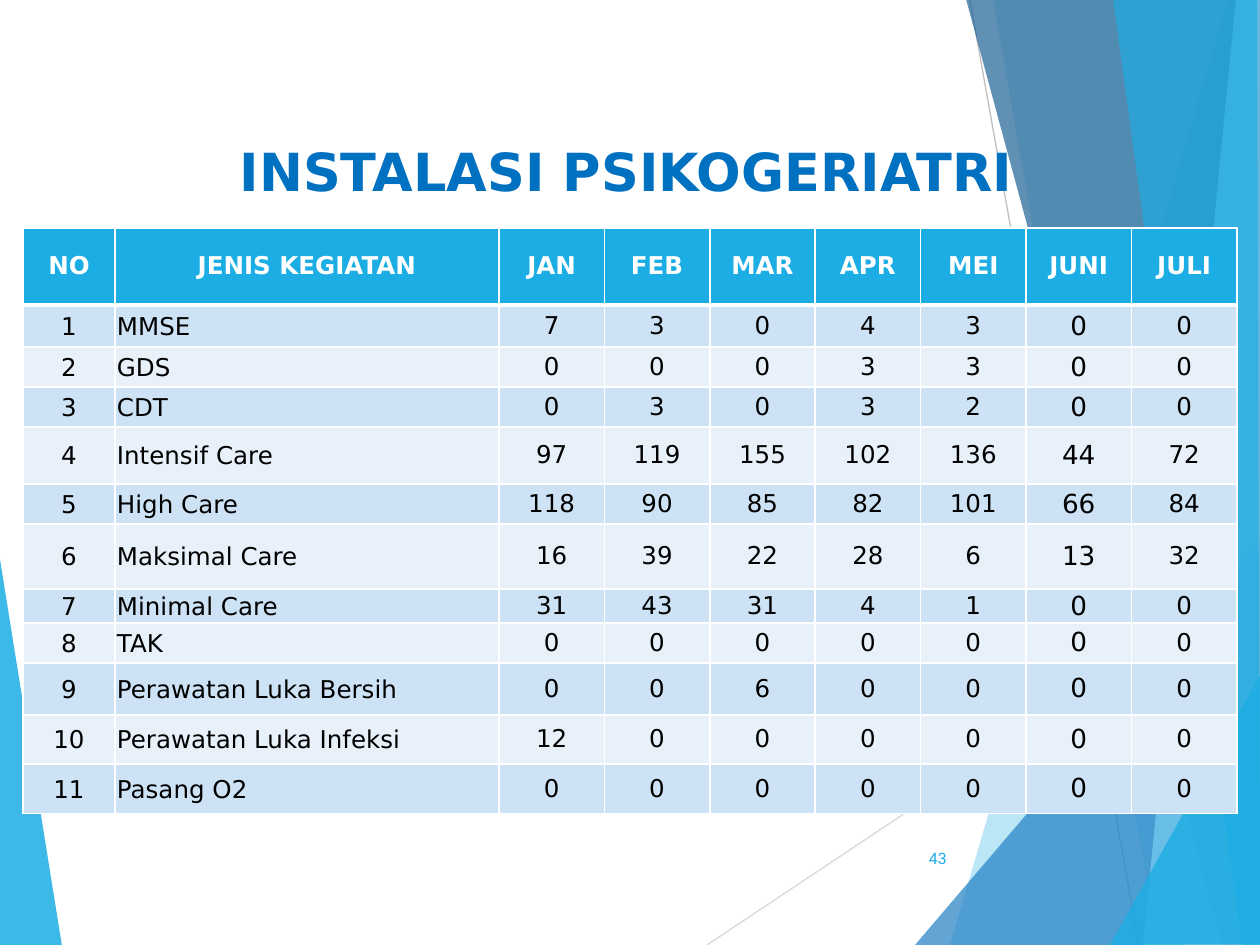
from lxml import etree
from pptx import Presentation
from pptx.dml.color import RGBColor
from pptx.enum.shapes import MSO_CONNECTOR
from pptx.enum.text import MSO_ANCHOR, MSO_AUTO_SIZE, PP_ALIGN
from pptx.oxml.ns import qn
from pptx.util import Emu, Pt

STRAIGHT = MSO_CONNECTOR.STRAIGHT
TOP, MIDDLE = MSO_ANCHOR.TOP, MSO_ANCHOR.MIDDLE
LEFT, CENTER, RIGHT = PP_ALIGN.LEFT, PP_ALIGN.CENTER, PP_ALIGN.RIGHT
NO_AUTOFIT = MSO_AUTO_SIZE.NONE

EMU_PER_PX = 914400 / 126
SLIDE_BOX = (0, 0, 1260, 945)
TITLE_BOX = (53, 66, 1147, 103)
TABLE_BOX = (23, 228, 1214, 586)
NUMBER_BOX = (888, 833, 71, 50)

WHITE = RGBColor(0xFF, 0xFF, 0xFF)
BLACK = RGBColor(0x00, 0x00, 0x00)
CYAN = RGBColor(0x1C, 0xAD, 0xE4)
BLUE = RGBColor(0x26, 0x83, 0xC6)
NAVY = RGBColor(0x1D, 0x62, 0x94)
SKY = RGBColor(0x77, 0xCE, 0xEF)
TITLE_BLUE = RGBColor(0x00, 0x70, 0xC0)
BAND_DARK = RGBColor(0xCD, 0xE3, 0xF5)
BAND_LIGHT = RGBColor(0xE8, 0xF1, 0xFA)
LIGHT_GRAY = RGBColor(0xD9, 0xD9, 0xD9)
GRAY = RGBColor(0xBF, 0xBF, 0xBF)

RAYS = [
    ((707, 945), (1261, 576), LIGHT_GRAY),
    ((970, 0), (1139, 945), GRAY),
]
LEFT_FACET = ([(-1, 553), (62, 946), (-1, 945)], CYAN, 85)
RIGHT_FACETS = [
    ([(1228, 0), (950, 945), (1262, 946), (1261, 1)], CYAN, 30),
    ([(993, -1), (1158, 945), (1261, 945), (1261, -1)], CYAN, 20),
    ([(915, 945), (1260, 541), (1261, 945)], BLUE, 72),
    ([(966, -1), (1222, 945), (1261, 944), (1261, -1)], NAVY, 70),
    ([(1236, -1), (1143, 945), (1261, 945), (1260, -1)], SKY, 70),
    ([(1113, -1), (1242, 945), (1260, 945), (1257, -1)], CYAN, 65),
    ([(1110, 945), (1261, 674), (1261, 944)], CYAN, 80),
]

HEADERS = ["NO", "JENIS KEGIATAN", "JAN", "FEB", "MAR", "APR", "MEI", "JUNI", "JULI"]
ACTIVITIES = [
    ("MMSE", 7, 3, 0, 4, 3, 0, 0),
    ("GDS", 0, 0, 0, 3, 3, 0, 0),
    ("CDT", 0, 3, 0, 3, 2, 0, 0),
    ("Intensif Care", 97, 119, 155, 102, 136, 44, 72),
    ("High Care", 118, 90, 85, 82, 101, 66, 84),
    ("Maksimal Care", 16, 39, 22, 28, 6, 13, 32),
    ("Minimal Care", 31, 43, 31, 4, 1, 0, 0),
    ("TAK", 0, 0, 0, 0, 0, 0, 0),
    ("Perawatan Luka Bersih", 0, 0, 6, 0, 0, 0, 0),
    ("Perawatan Luka Infeksi", 12, 0, 0, 0, 0, 0, 0),
    ("Pasang O2", 0, 0, 0, 0, 0, 0, 0),
]
ROW_HEIGHTS = [77, 42, 40, 40, 57, 40, 65, 34, 40, 52, 49, 50]
NUMBER_WIDTH, NAME_WIDTH = 92, 384
JUNE_COLUMN = HEADERS.index("JUNI")


def px(length):
    return Emu(round(length * EMU_PER_PX))


def write_text(frame, text, size=14, color=BLACK, bold=False, align=CENTER, font="DejaVu Sans"):
    paragraph = frame.paragraphs[0]
    paragraph.alignment = align
    run = paragraph.add_run()
    run.text = text
    run.font.name = font
    run.font.size = Pt(size)
    run.font.bold = bold
    run.font.color.rgb = color


def add_ray(slide, box, start, end, color):
    left, top = box[:2]
    ends = [px(offset + value) for point in (start, end) for offset, value in zip((left, top), point)]
    connector = slide.shapes.add_connector(STRAIGHT, *ends)
    connector.line.color.rgb = color
    connector.line.width = Pt(0.75)
    etree.SubElement(connector.element.spPr, qn("a:effectLst"))


def add_facet(slide, box, points, color, opacity):
    builder = slide.shapes.build_freeform(*points[0], scale=EMU_PER_PX)
    builder.add_line_segments(points[1:], close=True)
    facet = builder.convert_to_shape(px(box[0]), px(box[1]))
    facet.shadow.inherit = False
    facet.line.fill.background()
    facet.fill.solid()
    facet.fill.fore_color.rgb = color
    color_element = facet.element.spPr.find(qn("a:solidFill"))[0]
    etree.SubElement(color_element, qn("a:alpha"), val=str(opacity * 1000))


def add_background(slide, box):
    add_facet(slide, box, *LEFT_FACET)
    for ray in RAYS:
        add_ray(slide, box, *ray)
    for facet in RIGHT_FACETS:
        add_facet(slide, box, *facet)


def place_title(slide, box):
    title = slide.shapes.title
    title.element.getparent().append(title.element)
    title.left, title.top, title.width, title.height = map(px, box)
    frame = title.text_frame
    frame.auto_size = NO_AUTOFIT
    frame.vertical_anchor = TOP
    frame.margin_top, frame.margin_bottom = px(73), 0
    write_text(frame, "INSTALASI PSIKOGERIATRI", size=30, color=TITLE_BLUE, bold=True)


def set_borders(cell, top=1, bottom=1):
    properties = cell._tc.get_or_add_tcPr()
    for side, width in (("L", 1), ("R", 1), ("T", top), ("B", bottom)):
        line = etree.SubElement(properties, qn(f"a:ln{side}"), w=str(Pt(width)))
        fill = etree.SubElement(line, qn("a:solidFill"))
        etree.SubElement(fill, qn("a:srgbClr"), val=str(WHITE))


def fill_cell(cell, text, fill, margins, top=1, bottom=1, **text_format):
    set_borders(cell, top, bottom)
    cell.fill.solid()
    cell.fill.fore_color.rgb = fill
    cell.vertical_anchor = MIDDLE
    cell.margin_left, cell.margin_top, cell.margin_right, cell.margin_bottom = map(px, margins)
    write_text(cell.text_frame, text, **text_format)


def add_activity_table(slide, box):
    width = box[2]
    table = slide.shapes.add_table(len(ROW_HEIGHTS), len(HEADERS), *map(px, box)).table
    table.first_row = table.horz_banding = False
    month_count = len(HEADERS) - 2
    month_width = (width - NUMBER_WIDTH - NAME_WIDTH) / month_count
    for column, column_width in zip(table.columns, [NUMBER_WIDTH, NAME_WIDTH] + [month_width] * month_count):
        column.width = px(column_width)
    for row, height in zip(table.rows, ROW_HEIGHTS):
        row.height = px(height)
    for column, header in enumerate(HEADERS):
        fill_cell(table.cell(0, column), header, CYAN, (19, 10, 19, 10), bottom=3, color=WHITE, bold=True)
    for number, activity in enumerate(ACTIVITIES, start=1):
        for column, value in enumerate((number, *activity)):
            fill_cell(
                table.cell(number, column),
                str(value),
                BAND_DARK if number % 2 else BAND_LIGHT,
                (2, 2, 2, 0) if column < 2 else (0, 0, 0, 0),
                top=3 if number == 1 else 1,
                size=15 if column == JUNE_COLUMN else 14,
                align=LEFT if column == 1 else CENTER,
            )


def add_slide_number(slide, box):
    frame = slide.shapes.add_textbox(*map(px, box)).text_frame
    frame.word_wrap = True
    frame.vertical_anchor = MIDDLE
    write_text(frame, "43", size=9, color=CYAN, align=RIGHT, font="Roboto")


def main():
    presentation = Presentation()
    presentation.slide_width, presentation.slide_height = map(px, SLIDE_BOX[2:])
    slide = presentation.slides.add_slide(presentation.slide_layouts[5])
    add_background(slide, SLIDE_BOX)
    place_title(slide, TITLE_BOX)
    add_activity_table(slide, TABLE_BOX)
    add_slide_number(slide, NUMBER_BOX)
    presentation.save("out.pptx")


if __name__ == "__main__":
    main()
